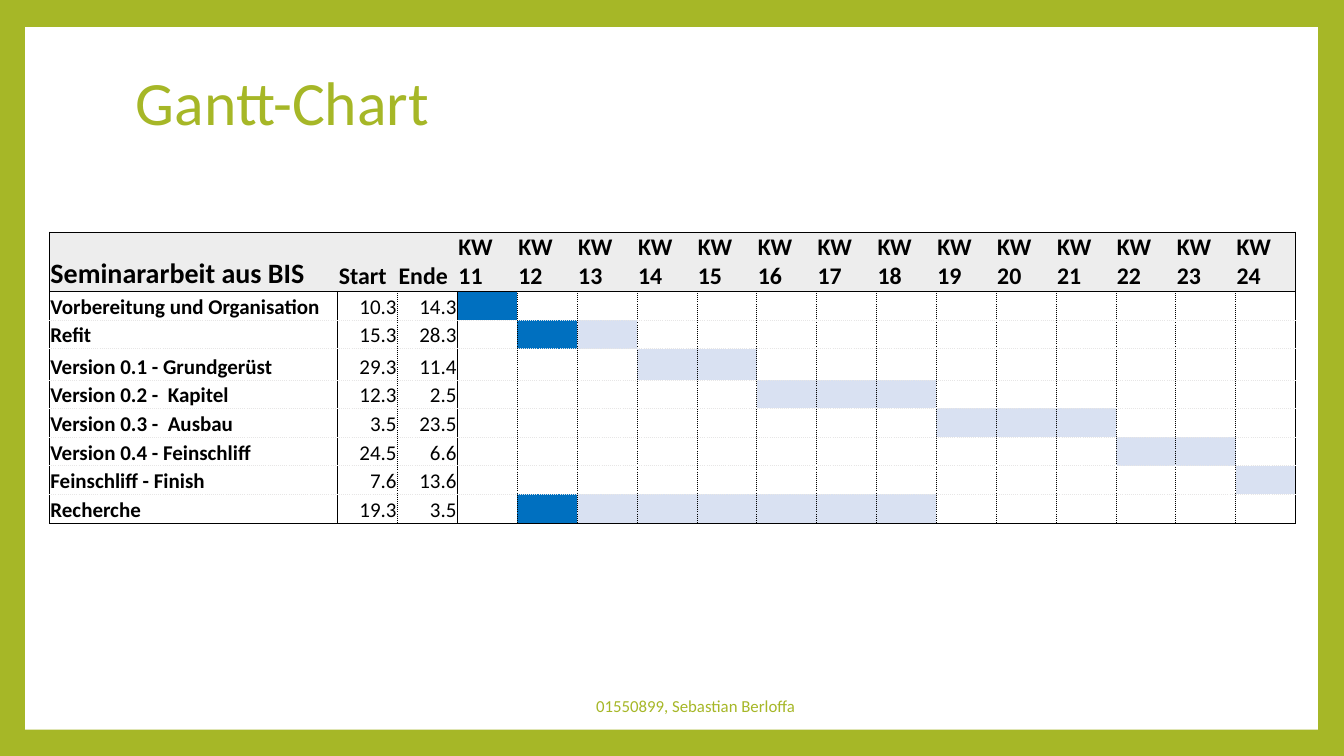
from lxml import etree
from pptx import Presentation
from pptx.dml.color import RGBColor
from pptx.enum.shapes import MSO_SHAPE as Shape
from pptx.enum.text import MSO_ANCHOR as Anchor, PP_ALIGN as Align
from pptx.oxml.ns import qn
from pptx.util import Inches, Pt

FONT = "Calibri"
GREEN, WHITE, BLACK = "A6B727", "FFFFFF", "000000"
HEADER_GRAY, GRID_GRAY = "EDEDED", "E7E6E6"
DONE, PLANNED = "0070C0", "D9E1F2"

SOLID, DOTTED, ROW_RULE = (BLACK, "solid"), (BLACK, "sysDot"), (GRID_GRAY, "sysDot")

FIRST_WEEK, LAST_WEEK = 11, 24
LABELS = ["Seminararbeit aus BIS", "Start", "Ende"]
# Task, start, end, weeks done, weeks planned
TASKS = [
    ("Vorbereitung und Organisation", "10.3", "14.3", [11], []),
    ("Refit", "15.3", "28.3", [12], [13]),
    ("Version 0.1 - Grundgerüst", "29.3", "11.4", [], [14, 15]),
    ("Version 0.2 -  Kapitel", "12.3", "2.5", [], [16, 17, 18]),
    ("Version 0.3 -  Ausbau", "3.5", "23.5", [], [19, 20, 21]),
    ("Version 0.4 - Feinschliff", "24.5", "6.6", [], [22, 23]),
    ("Feinschliff - Finish", "7.6", "13.6", [], [24]),
    ("Recherche", "19.3", "3.5", [12], range(13, 19)),
]


def color(value):
    return RGBColor.from_string(value)


def format_runs(paragraph, size, font_color, bold=False):
    for run in paragraph.runs:
        run.font.name = FONT
        run.font.size = Pt(size)
        run.font.bold = bold
        run.font.color.rgb = color(font_color)


def add_text(slide, box, text, size, anchor, align):
    shape = slide.shapes.add_textbox(*map(Inches, box))
    frame = shape.text_frame
    frame.word_wrap = True
    frame.vertical_anchor = anchor
    frame.text = text
    paragraph = frame.paragraphs[0]
    paragraph.alignment = align
    paragraph.line_spacing = 0.9
    format_runs(paragraph, size, GREEN)


def add_frame(slide, box):
    slide.background.fill.solid()
    slide.background.fill.fore_color.rgb = color(GREEN)
    panel = slide.shapes.add_shape(Shape.RECTANGLE, *map(Inches, box))
    panel.shadow.inherit = False
    panel.fill.solid()
    panel.fill.fore_color.rgb = color(WHITE)
    panel.line.fill.background()


def set_borders(cell, borders):
    """Left, right, top, bottom; None means no line."""
    properties = cell._tc.get_or_add_tcPr()
    for index, (side, border) in enumerate(zip("LRTB", borders)):
        line = etree.Element(qn(f"a:ln{side}"), w=str(Pt(0.5)))
        if border is None:
            etree.SubElement(line, qn("a:noFill"))
        else:
            fill = etree.SubElement(line, qn("a:solidFill"))
            etree.SubElement(fill, qn("a:srgbClr"), val=border[0])
            etree.SubElement(line, qn("a:prstDash"), val=border[1])
        properties.insert(index, line)


def fill_cell(cell, text, size, bold, align, fill):
    cell.margin_left = cell.margin_right = cell.margin_top = Inches(0.01)
    cell.margin_bottom = 0
    cell.vertical_anchor = Anchor.BOTTOM
    paragraph = cell.text_frame.paragraphs[0]
    if text:
        paragraph.text = text
        paragraph.alignment = align
        format_runs(paragraph, size, BLACK, bold)
    else:
        # Small empty text, so that the row keeps its height
        etree.SubElement(paragraph._p, qn("a:endParaRPr"), sz=str(size * 100))
    if fill:
        cell.fill.solid()
        cell.fill.fore_color.rgb = color(fill)
    else:
        cell.fill.background()


def cell_borders(row, column, last_row, last_column):
    if row == 0:
        return (SOLID if column == 0 else None,
                SOLID if column == last_column else None, SOLID, SOLID)
    return (SOLID if column in (0, 1, 3) else DOTTED,
            SOLID if column in (0, 2, last_column) else DOTTED,
            SOLID if row == 1 else ROW_RULE,
            SOLID if row == last_row else ROW_RULE)


def add_gantt(slide, box):
    left, top, width, height = box
    weeks = range(FIRST_WEEK, LAST_WEEK + 1)
    headers = LABELS + [f"KW {week}" for week in weeks]
    last_row, last_column = len(TASKS), len(headers) - 1
    shape = slide.shapes.add_table(last_row + 1, last_column + 1, *map(Inches, box))
    table = shape.table
    table.first_row = table.horz_banding = False

    # Wide task column, equal date and week columns
    task_width, header_height, tall_row, tall_height = 2.86, 0.59, 3, 0.31
    for index, column in enumerate(table.columns):
        column.width = Inches(task_width if index == 0
                              else (width - task_width) / last_column)
    row_height = (height - header_height - tall_height) / (last_row - 1)
    special_heights = {0: header_height, tall_row: tall_height}
    for index, row in enumerate(table.rows):
        row.height = Inches(special_heights.get(index, row_height))

    # Header
    for index, header in enumerate(headers):
        fill_cell(table.cell(0, index), header, 20 if index == 0 else 17,
                  True, Align.LEFT, HEADER_GRAY)

    # Tasks, dates and bars
    for row, (*labels, done, planned) in enumerate(TASKS, 1):
        for index, label in enumerate(labels):
            fill_cell(table.cell(row, index), label, 15, index == 0,
                      Align.LEFT if index == 0 else Align.RIGHT, None)
        for index, week in enumerate(weeks, len(labels)):
            fill = DONE if week in done else PLANNED if week in planned else None
            fill_cell(table.cell(row, index), "", 12, False, Align.LEFT, fill)

    for row in range(last_row + 1):
        for column in range(last_column + 1):
            set_borders(table.cell(row, column),
                        cell_borders(row, column, last_row, last_column))


def main():
    presentation = Presentation()
    presentation.slide_width, presentation.slide_height = Inches(13.33), Inches(7.5)
    slide = presentation.slides.add_slide(presentation.slide_layouts[6])
    add_frame(slide, (0.25, 0.27, 12.82, 6.97))
    add_text(slide, (1.25, 0.67, 10.8, 1.48), "Gantt-Chart", 44, Anchor.TOP, Align.LEFT)
    add_text(slide, (4.32, 6.81, 5.16, 0.4), "01550899, Sebastian Berloffa", 12,
             Anchor.MIDDLE, Align.CENTER)
    add_gantt(slide, (0.49, 2.3, 12.36, 2.89))
    presentation.save("out.pptx")


if __name__ == "__main__":
    main()
